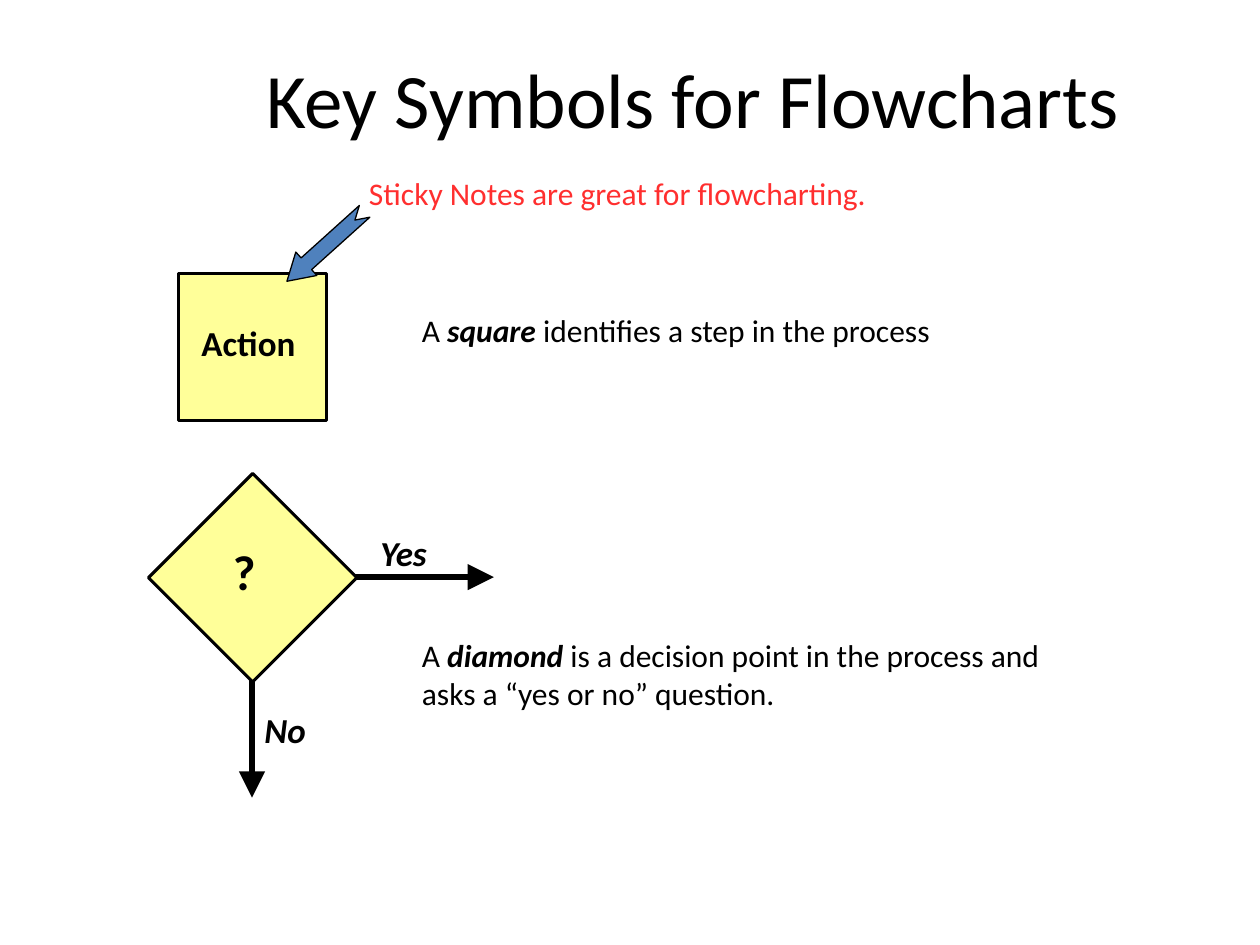
import pptx
import pptx.dml.color
import pptx.enum.shapes
import pptx.enum.text
import pptx.oxml.ns
import pptx.util
from dataclasses import dataclass
from lxml import etree

Inches = pptx.util.Inches
Shapes = pptx.enum.shapes.MSO_SHAPE


@dataclass(frozen=True)
class Theme:
    font: str = "Calibri"
    ink: str = "000000"
    note: str = "FF2F2F"
    symbol: str = "FFFF99"
    pointer: str = "4F81BD"
    title_size: int = 44
    mark_size: int = 28
    label_size: int = 20
    body_size: int = 18


THEME = Theme()


def color(value):
    return pptx.dml.color.RGBColor.from_string(value)


def add_text(page, frame, spans, size, ink=THEME.ink):
    """Add a text box; spans are (text, bold, italic) triples."""
    box = page.shapes.add_textbox(*map(Inches, frame))
    box.text_frame.word_wrap = True
    paragraph = box.text_frame.paragraphs[0]
    for text, bold, italic in spans:
        span = paragraph.add_run()
        span.text = text
        span.font.name = THEME.font
        span.font.size = pptx.util.Pt(size)
        span.font.bold = bold
        span.font.italic = italic
        span.font.color.rgb = color(ink)
    return box


def add_title(page, text):
    box = add_text(page, (1, 0.33, 9, 1.25), [(text, False, False)], THEME.title_size)
    box.text_frame.margin_top = Inches(0.08)
    box.text_frame.paragraphs[0].alignment = pptx.enum.text.PP_ALIGN.CENTER


def add_definition(page, frame, term, rest):
    spans = [("A ", False, False), (term, True, True), (rest, False, False)]
    add_text(page, frame, spans, THEME.body_size)


def add_symbol(page, kind, frame, fill, line_width, rotation=0):
    symbol = page.shapes.add_shape(kind, *map(Inches, frame))
    symbol.shadow.inherit = False
    symbol.rotation = rotation
    symbol.fill.solid()
    symbol.fill.fore_color.rgb = color(fill)
    symbol.line.color.rgb = color(THEME.ink)
    symbol.line.width = pptx.util.Pt(line_width)
    return symbol


def add_arrow(page, start, end):
    arrow = page.shapes.add_connector(
        pptx.enum.shapes.MSO_CONNECTOR.STRAIGHT, *map(Inches, start + end))
    arrow.line.color.rgb = color(THEME.ink)
    arrow.line.width = pptx.util.Pt(3)
    # Large arrowhead at the end, no shadow
    qn = pptx.oxml.ns.qn
    etree.SubElement(arrow.line._get_or_add_ln(), qn("a:tailEnd"),
                     type="triangle", w="lg", len="lg")
    etree.SubElement(arrow._element.spPr, qn("a:effectLst"))


def main():
    deck = pptx.Presentation()
    deck.slide_width, deck.slide_height = Inches(10), Inches(7.5)
    page = deck.slides.add_slide(deck.slide_layouts[6])

    # Decision exits, behind the symbols
    add_arrow(page, (2, 5.33), (2, 6.33))
    add_arrow(page, (2.75, 4.58), (3.92, 4.58))

    add_title(page, "Key Symbols for Flowcharts")

    # Action square and decision diamond
    side = 1.17
    for top, rotation in ((2.17, 0), (4, 45)):
        add_symbol(page, Shapes.RECTANGLE, (1.42, top, side, side),
                   THEME.symbol, 1.75, rotation)

    # Symbol and exit labels
    for frame, text, size, italic in (
        ((1.75, 4.25, 0.42, 0.57), "?", THEME.mark_size, False),
        ((2, 5.57, 0.67, 0.43), "No", THEME.label_size, True),
        ((2.92, 4.17, 0.83, 0.43), "Yes", THEME.label_size, True),
        ((1.5, 2.5, 1.17, 0.43), "Action", THEME.label_size, False),
    ):
        add_text(page, frame, [(text, True, italic)], size)

    # Definitions
    add_definition(page, (3.25, 2.42, 4.83, 0.4), "square",
                   " identifies a step in the process")
    add_definition(page, (3.25, 5, 5.17, 0.7), "diamond",
                   " is a decision point in the process and asks a “yes or no” question.")

    # Tip with its pointer
    add_text(page, (2.83, 1.33, 6.08, 0.4),
             [("Sticky Notes are great for flowcharting.", False, False)],
             THEME.body_size, THEME.note)
    pointer = add_symbol(page, Shapes.NOTCHED_RIGHT_ARROW, (2.17, 1.83, 0.83, 0.25),
                         THEME.pointer, 0.75, 138)
    pointer.adjustments[0] = 0.5
    pointer.adjustments[1] = 0.83

    deck.save("out.pptx")


if __name__ == "__main__":
    main()
